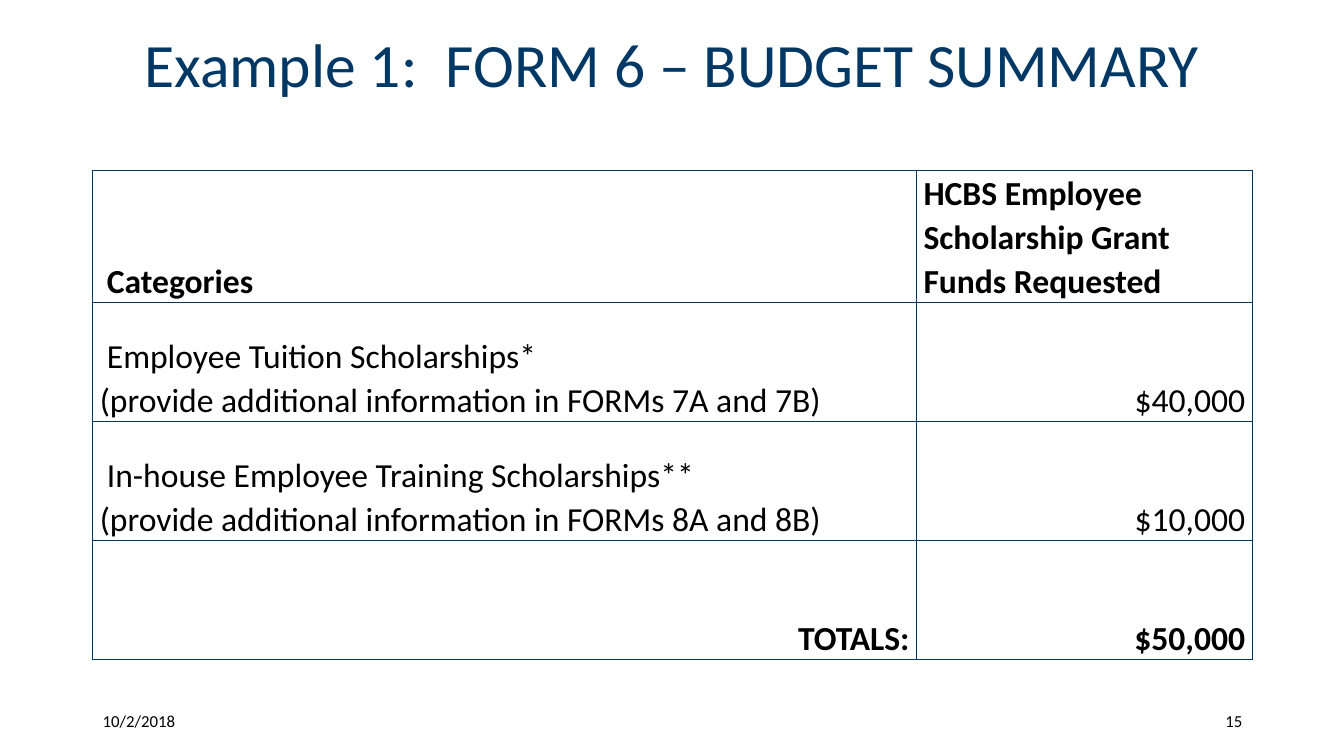
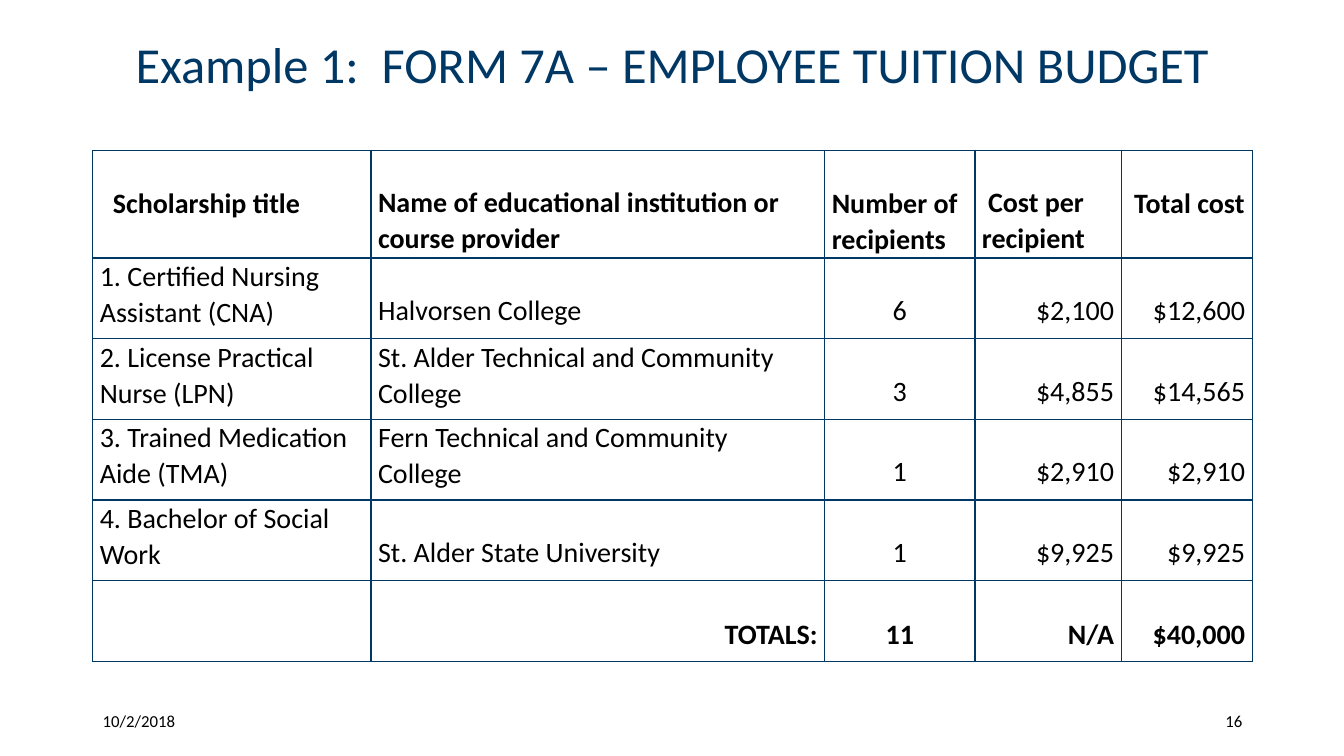
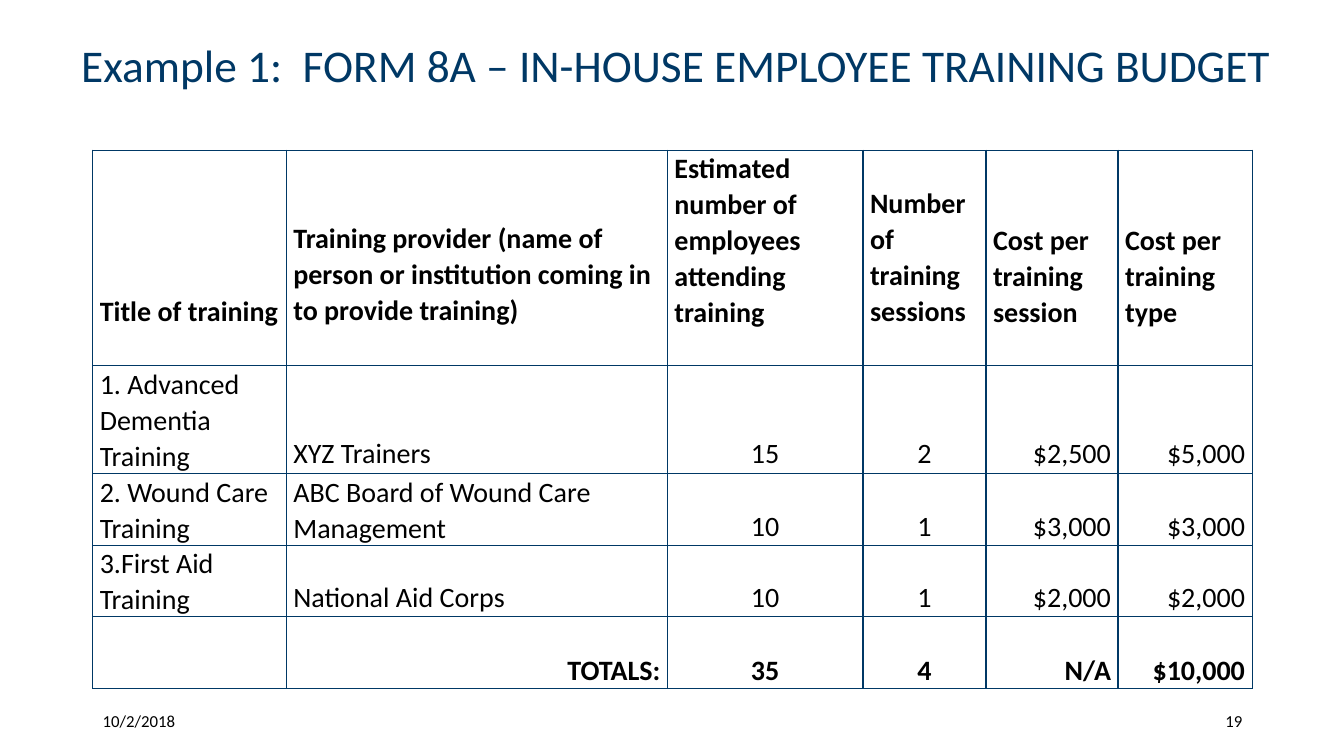
from itertools import zip_longest

from lxml import etree
from pptx import Presentation
from pptx.dml.color import RGBColor
from pptx.enum.text import MSO_ANCHOR, PP_ALIGN
from pptx.oxml.ns import qn
from pptx.util import Emu, Pt

LEFT, CENTER, RIGHT = PP_ALIGN.LEFT, PP_ALIGN.CENTER, PP_ALIGN.RIGHT
TOP, MIDDLE, BOTTOM = MSO_ANCHOR.TOP, MSO_ANCHOR.MIDDLE, MSO_ANCHOR.BOTTOM
ALIGNMENTS = {"l": LEFT, "c": CENTER, "r": RIGHT}

EMU_PER_PX = 9144  # 100 px to the inch
SLIDE_SIZE = (1333, 750)
BLANK_LAYOUT = 6

THEME = {
    "font": "Calibri",
    "navy": "003865",
    "black": "000000",
    "white": "FFFFFF",
    "footer_size": 12,
    "border_width": 1,
    "cell_margin": 7,
    "title_spacing": 0.9,
}

# Content: leads are the space above the text of each cell in a row,
# indents are first-line indents by (row, column).
DATE = "10/2/2018"
DATE_BOX = (92, 695, 149, 40)
NUMBER_BOX = (1082, 695, 160, 40)
TITLE_BOX = (92, 17, 1150, 100)
WIDE_TITLE_BOX = (50, 17, 1220, 100)
TOTALS = "TOTALS:"

SLIDES = [
    {
        "title": ("Example 1:  FORM 6 – BUDGET SUMMARY", 44, TITLE_BOX, CENTER),
        "number": "15",
        "origin": (92, 169),
        "columns": (817, 333),
        "heights": (131, 118, 118, 118),
        "alignment": "lr",
        "style": {"size": 24, "spacing": 1.07, "anchor": BOTTOM},
        "indents": {(0, 0): 7, (1, 0): 7, (2, 0): 7},
        "rows": [
            ("Categories", "HCBS Employee Scholarship Grant Funds Requested"),
            ("Employee Tuition Scholarships*\n"
             "(provide additional information in FORMs 7A and 7B)", "$40,000"),
            ("In-house Employee Training Scholarships**\n"
             "(provide additional information in FORMs 8A and 8B)", "$10,000"),
            (TOTALS, "$50,000"),
        ],
        "leads": [],
    },
    {
        "title": ("Example 1:  FORM 7A – EMPLOYEE TUITION BUDGET", 36, TITLE_BOX, CENTER),
        "number": "16",
        "origin": (92, 149),
        "columns": (276, 450, 149, 145, 130),
        "heights": (107, 80, 80, 80, 80, 80),
        "alignment": "llcrr",
        "style": {"size": 20, "spacing": 1.05, "anchor": TOP},
        "indents": {(0, 0): 13, (0, 3): 6, (0, 4): 6},
        "rows": [
            ("Scholarship title", "Name of educational institution or course provider",
             "Number of recipients", "Cost per recipient", "Total cost"),
            ("1. Certified Nursing Assistant (CNA)", "Halvorsen College",
             "6", "$2,100", "$12,600"),
            ("2. License Practical Nurse (LPN)", "St. Alder Technical and Community College",
             "3", "$4,855", "$14,565"),
            ("3. Trained Medication Aide (TMA)", "Fern Technical and Community College",
             "1", "$2,910", "$2,910"),
            ("4. Bachelor of Social Work", "St. Alder State University",
             "1", "$9,925", "$9,925"),
            ("", TOTALS, "11", "N/A", "$40,000"),
        ],
        "leads": [
            (35, 34, 35, 34, 35),
            (0, 34, 34, 34, 34),
            (0, 0, 34, 34, 34),
            (0, 0, 34, 34, 34),
            (0, 34, 34, 34, 34),
            (0, 35, 35, 35, 35),
        ],
    },
    {
        "title": ("Example 1:  FORM 8A – IN-HOUSE EMPLOYEE TRAINING BUDGET", 32.4,
                  WIDE_TITLE_BOX, RIGHT),
        "number": "19",
        "origin": (92, 149),
        "columns": (192, 378, 194, 122, 131, 133),
        "heights": (214, 107, 71, 71, 71),
        "alignment": "llccrr",
        "style": {"size": 20, "spacing": 1.05, "anchor": TOP},
        "indents": {},
        "rows": [
            ("Title of training",
             "Training provider (name of person or institution coming in to provide training)",
             "Estimated number of employees attending training",
             "Number\nof training sessions", "Cost per training\nsession",
             "Cost per training type"),
            ("1. Advanced Dementia Training", "XYZ Trainers", "15", "2", "$2,500", "$5,000"),
            ("2. Wound Care Training", "ABC Board of Wound Care Management",
             "10", "1", "$3,000", "$3,000"),
            ("3.First Aid Training", "National Aid Corps", "10", "1", "$2,000", "$2,000"),
            ("", TOTALS, "35", "4", "N/A", "$10,000"),
        ],
        "leads": [
            (142, 69, 0, 35, 71, 71),
            (0, 69, 69, 69, 69, 69),
            (0, 0, 34, 34, 34, 34),
            (0, 34, 34, 34, 34, 34),
            (0, 35, 35, 35, 35, 35),
        ],
    },
]


def px(length):
    return Emu(length * EMU_PER_PX)


def set_attributes(target, values):
    for name, value in values.items():
        setattr(target, name, value)


def write_text(frame, text, size, color="black", bold=False, alignment=LEFT,
               spacing=1.0, indent=0):
    for index, line in enumerate(text.split("\n")):
        paragraph = frame.add_paragraph() if index else frame.paragraphs[0]
        set_attributes(paragraph, {"alignment": alignment, "line_spacing": spacing})
        if indent and index == 0:
            paragraph._p.get_or_add_pPr().set("indent", str(px(indent)))
        if line:
            run = paragraph.add_run()
            run.text = line
            set_attributes(run.font, {"name": THEME["font"], "size": Pt(size), "bold": bold})
            run.font.color.rgb = RGBColor.from_string(THEME[color])


def add_text(slide, text, box, size, **text_format):
    frame = slide.shapes.add_textbox(*map(px, box)).text_frame
    set_attributes(frame, {"word_wrap": True, "vertical_anchor": MIDDLE})
    write_text(frame, text, size, **text_format)


def style_cell(cell, anchor, lead):
    margin = px(THEME["cell_margin"])
    set_attributes(cell, {
        "margin_left": margin, "margin_right": margin,
        "margin_top": px(lead), "margin_bottom": 0, "vertical_anchor": anchor,
    })
    cell.fill.solid()
    cell.fill.fore_color.rgb = RGBColor.from_string(THEME["white"])
    # Borders come before the fill in the cell properties
    properties = cell._tc.get_or_add_tcPr()
    for index, side in enumerate(("a:lnL", "a:lnR", "a:lnT", "a:lnB")):
        border = etree.Element(qn(side), w=str(Pt(THEME["border_width"])))
        fill = etree.SubElement(border, qn("a:solidFill"))
        etree.SubElement(fill, qn("a:srgbClr"), val=THEME["navy"])
        properties.insert(index, border)


def add_budget_table(slide, content):
    rows, columns, heights = content["rows"], content["columns"], content["heights"]
    style = content["style"]
    box = (*content["origin"], sum(columns), sum(heights))
    table = slide.shapes.add_table(len(rows), len(columns), *map(px, box)).table
    set_attributes(table, {"first_row": False, "horz_banding": False})
    for column, width in zip(table.columns, columns):
        column.width = px(width)
    for row, height in zip(table.rows, heights):
        row.height = px(height)

    last = len(rows) - 1
    for r, (texts, leads) in enumerate(zip_longest(rows, content["leads"], fillvalue=())):
        for c, (text, lead) in enumerate(zip_longest(texts, leads, fillvalue=0)):
            alignment = ALIGNMENTS[content["alignment"][c]]
            if r == 0:
                alignment = LEFT
            elif text == TOTALS:
                alignment = RIGHT
            cell = table.cell(r, c)
            style_cell(cell, style["anchor"], lead)
            write_text(cell.text_frame, text, style["size"], bold=r in (0, last),
                       alignment=alignment, spacing=style["spacing"],
                       indent=content["indents"].get((r, c), 0))


def add_budget_slide(presentation, content):
    slide = presentation.slides.add_slide(presentation.slide_layouts[BLANK_LAYOUT])
    title, size, box, alignment = content["title"]
    add_text(slide, title, box, size, color="navy", alignment=alignment,
             spacing=THEME["title_spacing"])
    add_budget_table(slide, content)
    # Footer
    add_text(slide, DATE, DATE_BOX, THEME["footer_size"])
    add_text(slide, content["number"], NUMBER_BOX, THEME["footer_size"], alignment=RIGHT)


def main():
    presentation = Presentation()
    presentation.slide_width, presentation.slide_height = map(px, SLIDE_SIZE)
    for content in SLIDES:
        add_budget_slide(presentation, content)
    presentation.save("out.pptx")


if __name__ == "__main__":
    main()
